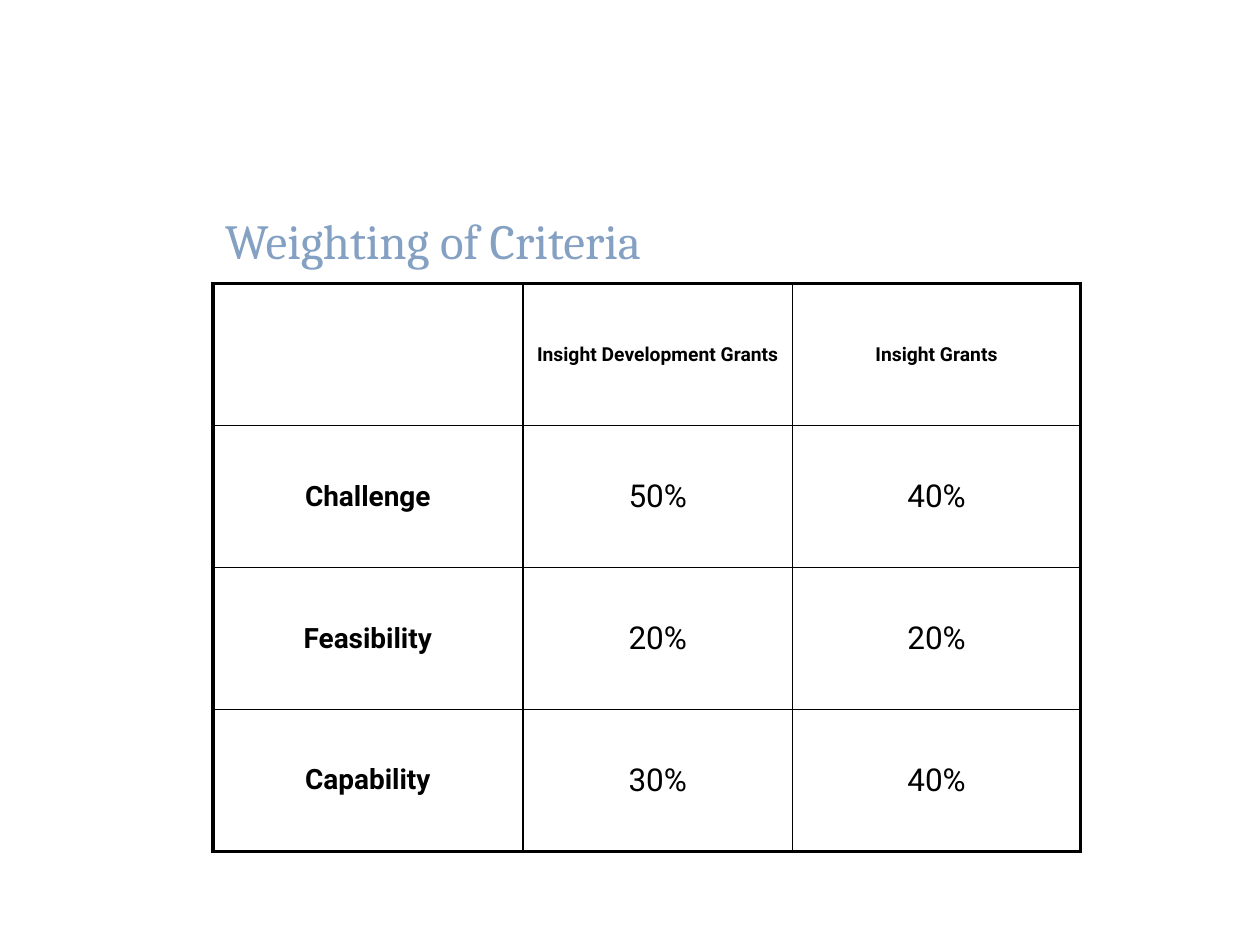
from lxml import etree
from pptx import Presentation
from pptx.dml.color import RGBColor
from pptx.enum.text import MSO_ANCHOR as Anchor, PP_ALIGN as Align
from pptx.oxml.ns import qn
from pptx.util import Cm, Pt

TITLE = "Weighting of Criteria"
ROWS = [
    ("", "Insight Development Grants", "Insight Grants"),
    ("Challenge", "50%", "40%"),
    ("Feasibility", "20%", "20%"),
    ("Capability", "30%", "40%"),
]
LEFT, TITLE_TOP, TABLE_TOP = 4.29, 3.94, 5.72
COLUMN_WIDTHS = (6.25, 5.44, 5.8)
ROW_HEIGHT = 2.86
HEADER_SIZE, LABEL_SIZE, VALUE_SIZE = 11, 16, 18
OUTER_LINE, INNER_LINE = 2.25, 1
BLACK, BLUE = "000000", "84A0C2"


def style(paragraph, name, size, color, bold=False):
    font = paragraph.font
    font.name, font.size, font.bold = name, Pt(size), bold
    font.color.rgb = RGBColor.from_string(color)


def set_borders(cell, widths):
    """Draw the cell's borders; widths are points for left, right, top, bottom."""
    properties = cell._tc.get_or_add_tcPr()
    for index, (side, width) in enumerate(zip("LRTB", widths)):
        line = etree.Element(qn(f"a:ln{side}"), w=str(Pt(width)))
        fill = etree.SubElement(line, qn("a:solidFill"))
        etree.SubElement(fill, qn("a:srgbClr"), val=BLACK)
        properties.insert(index, line)


def add_title(page):
    box = page.shapes.add_textbox(Cm(LEFT), Cm(TITLE_TOP), Cm(17.09), Cm(1.8))
    frame = box.text_frame
    frame.word_wrap = True
    frame.vertical_anchor = Anchor.MIDDLE
    frame.text = TITLE
    style(frame.paragraphs[0], "Cambria", 28, BLUE)


def add_weights(page):
    last_row, last_column = len(ROWS) - 1, len(COLUMN_WIDTHS) - 1
    table = page.shapes.add_table(
        len(ROWS), len(COLUMN_WIDTHS), Cm(LEFT), Cm(TABLE_TOP),
        Cm(sum(COLUMN_WIDTHS)), Cm(ROW_HEIGHT * len(ROWS))).table
    table.first_row = table.horz_banding = False
    for column, width in zip(table.columns, COLUMN_WIDTHS):
        column.width = Cm(width)
    for r, texts in enumerate(ROWS):
        table.rows[r].height = Cm(ROW_HEIGHT)
        for c, text in enumerate(texts):
            cell = table.cell(r, c)
            cell.fill.background()
            cell.vertical_anchor = Anchor.MIDDLE
            cell.text = text
            paragraph = cell.text_frame.paragraphs[0]
            paragraph.alignment = Align.CENTER
            size = HEADER_SIZE if r == 0 else LABEL_SIZE if c == 0 else VALUE_SIZE
            style(paragraph, "Roboto", size, BLACK, bold=r == 0 or c == 0)
            on_edge = (c == 0, c == last_column, r == 0, r == last_row)
            set_borders(cell, [OUTER_LINE if edge else INNER_LINE for edge in on_edge])


def main():
    deck = Presentation()
    deck.slide_width, deck.slide_height = Cm(25.4), Cm(19.05)
    page = deck.slides.add_slide(deck.slide_layouts[6])
    add_title(page)
    add_weights(page)
    deck.save("out.pptx")


if __name__ == "__main__":
    main()
